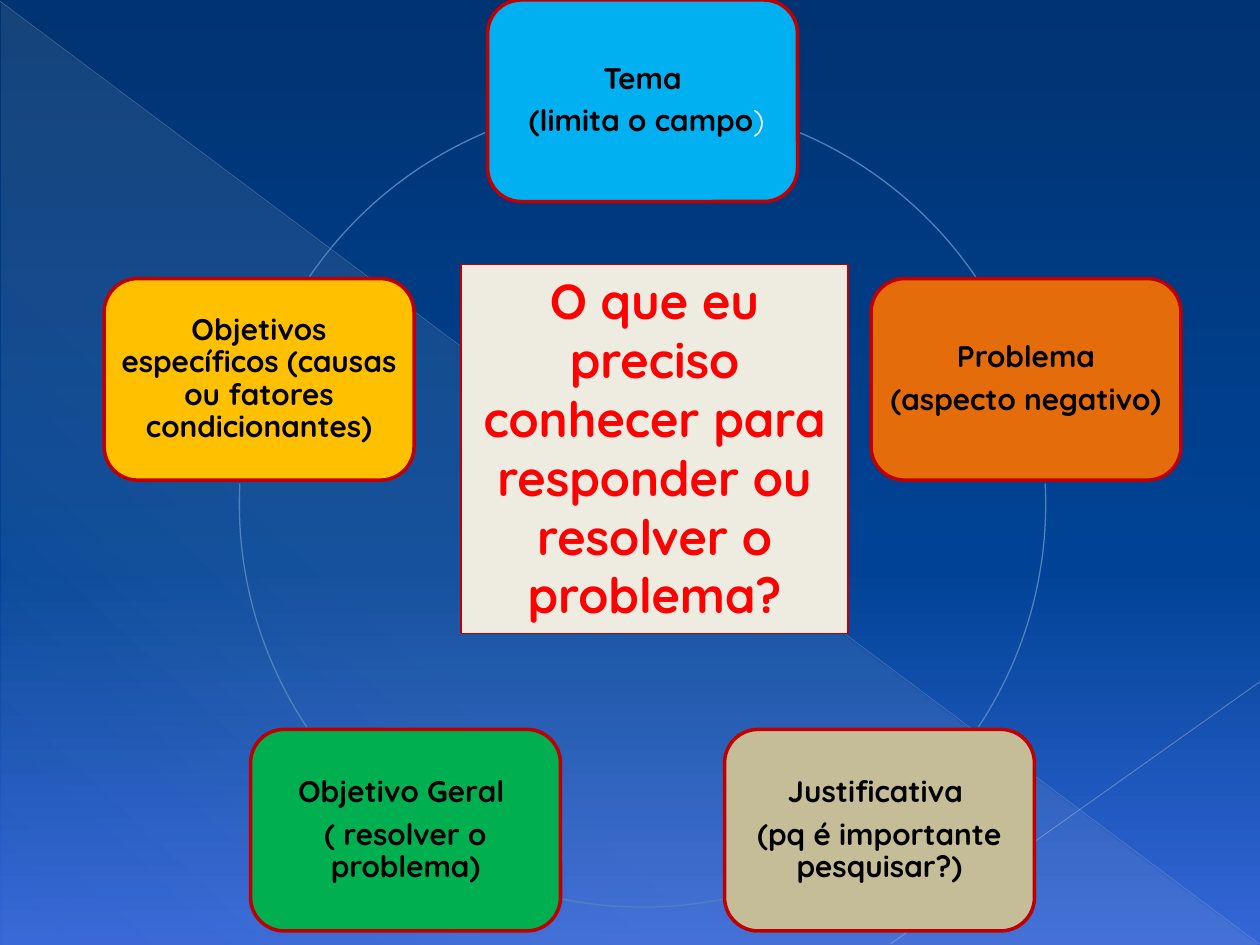
from math import cos, radians, sin

from lxml.etree import SubElement
from pptx import Presentation
from pptx.dml.color import RGBColor
from pptx.enum.shapes import MSO_CONNECTOR as Connector, MSO_SHAPE as Shape
from pptx.enum.text import MSO_ANCHOR as Anchor, MSO_AUTO_SIZE as AutoSize, PP_ALIGN as Align
from pptx.oxml.ns import qn
from pptx.util import Inches, Pt

COLORS = {
    "night": "003371", "navy": "004396", "royal": "3566D7",
    "cream": "EEECE1", "haze": "ADB6CE", "mist": "B6BED3",
    "border": "C00000", "ring": "4F81BD", "ink": "000000",
    "white": "FFFFFF", "red": "FF0000", "sky": "00B0F0",
    "orange": "E46C0A", "sand": "C4BD97", "green": "00B050", "amber": "FFC000",
}
FONT = "Quicksand"
COLUMNS, ROWS = 100, 75

# Cycle geometry, in grid cells
CENTER_X, CENTER_Y, RADIUS = 51, 40, 32
CARD_WIDTH, CARD_HEIGHT = 24.6, 16

# Each card is a list of paragraphs, each a list of (text, format overrides)
CARDS = [
    ("sky", [[("Tema", {})],
             [(" (limita o campo", {}), (")", {"color": "white", "bold": False})]]),
    ("orange", [[("Problema", {})], [("(aspecto negativo)", {})]]),
    ("sand", [[("Justificativa ", {})], [("(pq é importante pesquisar?)", {})]]),
    ("green", [[("Objetivo Geral ", {})], [("( resolver o problema)", {})]]),
    ("amber", [[("Objetivos específicos (causas ou fatores condicionantes)", {})]]),
]
# Visible parts of the ring, in degrees clockwise from the right
ARCS = [(293, 325.7), (357.1, 33.6), (78.6, 101.4), (146.4, 182.9), (214.3, 247)]
QUESTION = "O que eu preciso conhecer para responder ou resolver o problema?"


def rgb(name):
    return RGBColor.from_string(COLORS[name])


def add_alpha(color_node, percent):
    SubElement(color_node, qn("a:alpha"), val=str(percent * 1000))


def set_gradient(fill, stops, angle):
    """Stops are (position, colour, opacity), in percent; angle runs clockwise."""
    fill.gradient()
    fill.gradient_angle = 360 - angle
    stop_list = fill.gradient_stops[0]._gs.getparent()
    for old in list(stop_list):
        stop_list.remove(old)
    for position, color, opacity in stops:
        stop = SubElement(stop_list, qn("a:gs"), pos=str(position * 1000))
        node = SubElement(stop, qn("a:srgbClr"), val=COLORS[color])
        if opacity < 100:
            add_alpha(node, opacity)


def write_text(para, text, size=17, color="ink", bold=True):
    span = para.add_run()
    span.text = text
    span.font.name, span.font.size, span.font.bold = FONT, Pt(size), bold
    span.font.color.rgb = rgb(color)


class Canvas:
    def __init__(self, deck):
        self.page = deck.slides.add_slide(deck.slide_layouts[6])
        self.cell_width = deck.slide_width / COLUMNS
        self.cell_height = deck.slide_height / ROWS

    def place(self, x, y):
        return round(x * self.cell_width), round(y * self.cell_height)

    def background(self, stops, angle):
        set_gradient(self.page.background.fill, stops, angle)

    def shape(self, kind, x, y, width, height, fill=None, line=None, line_width=0.75):
        box = self.page.shapes.add_shape(
            kind, *self.place(x, y), *self.place(width, height))
        box.shadow.inherit = False
        if fill:
            box.fill.solid()
            box.fill.fore_color.rgb = rgb(fill)
        else:
            box.fill.background()
        if line:
            box.line.color.rgb = rgb(line)
            box.line.width = Pt(line_width)
        else:
            box.line.fill.background()
        return box

    def line(self, start, end, color, width, opacity):
        line = self.page.shapes.add_connector(
            Connector.STRAIGHT, *self.place(*start), *self.place(*end))
        line.line.color.rgb = rgb(color)
        line.line.width = Pt(width)
        properties = line._element.spPr
        add_alpha(properties.find(".//" + qn("a:srgbClr")), opacity)
        SubElement(properties, qn("a:effectLst"))

    def arc(self, start, end):
        arc = self.shape(Shape.ARC, CENTER_X - RADIUS, CENTER_Y - RADIUS,
                         2 * RADIUS, 2 * RADIUS, line="ring")
        # Angles are stored in 60000ths of a degree, adjustments in 100000ths
        arc.adjustments[0], arc.adjustments[1] = start * 0.6, end * 0.6

    def card(self, angle, fill, paragraphs):
        """Rounded box on the ring, angle in degrees clockwise from the top."""
        x = CENTER_X + RADIUS * sin(radians(angle)) - CARD_WIDTH / 2
        y = CENTER_Y - RADIUS * cos(radians(angle)) - CARD_HEIGHT / 2
        box = self.shape(Shape.ROUNDED_RECTANGLE, x, y, CARD_WIDTH, CARD_HEIGHT,
                         fill, "border", 2)
        frame = box.text_frame
        frame.word_wrap, frame.vertical_anchor = True, Anchor.MIDDLE
        frame.margin_left = frame.margin_right = 0
        frame.margin_top = frame.margin_bottom = 0
        for index, spans in enumerate(paragraphs):
            para = frame.add_paragraph() if index else frame.paragraphs[0]
            para.alignment, para.line_spacing, para.space_after = Align.CENTER, 0.9, Pt(6)
            for text, style in spans:
                write_text(para, text, **style)

    def question(self, text, x, y, width, height):
        box = self.shape(Shape.RECTANGLE, x, y, width, height, "cream", "border")
        frame = box.text_frame
        frame.word_wrap, frame.vertical_anchor = True, Anchor.TOP
        frame.auto_size = AutoSize.SHAPE_TO_FIT_TEXT
        frame.paragraphs[0].alignment = Align.CENTER
        write_text(frame.paragraphs[0], text, size=28, color="red")


def main():
    deck = Presentation()
    deck.slide_width, deck.slide_height = Inches(10), Inches(7.5)
    canvas = Canvas(deck)
    canvas.background([(0, "night", 100), (60, "navy", 100), (100, "royal", 100)], 90)
    corner = canvas.shape(Shape.RIGHT_TRIANGLE, 0.1, 0.2, 99.8, 74.8)
    set_gradient(corner.fill, [(0, "cream", 10), (70, "cream", 8), (100, "cream", 1)], 133)
    canvas.line((0, 0.1), (99.9, 74.9), "haze", 0.39, 35)
    canvas.line((100, 54.1), (70.7, 74.9), "mist", 0.47, 45)
    for index, ((fill, paragraphs), arc) in enumerate(zip(CARDS, ARCS)):
        canvas.card(index * 360 / len(CARDS), fill, paragraphs)
        canvas.arc(*arc)
    canvas.question(QUESTION, 36.6, 21, 30.7, 29.3)
    deck.save("out.pptx")


if __name__ == "__main__":
    main()
